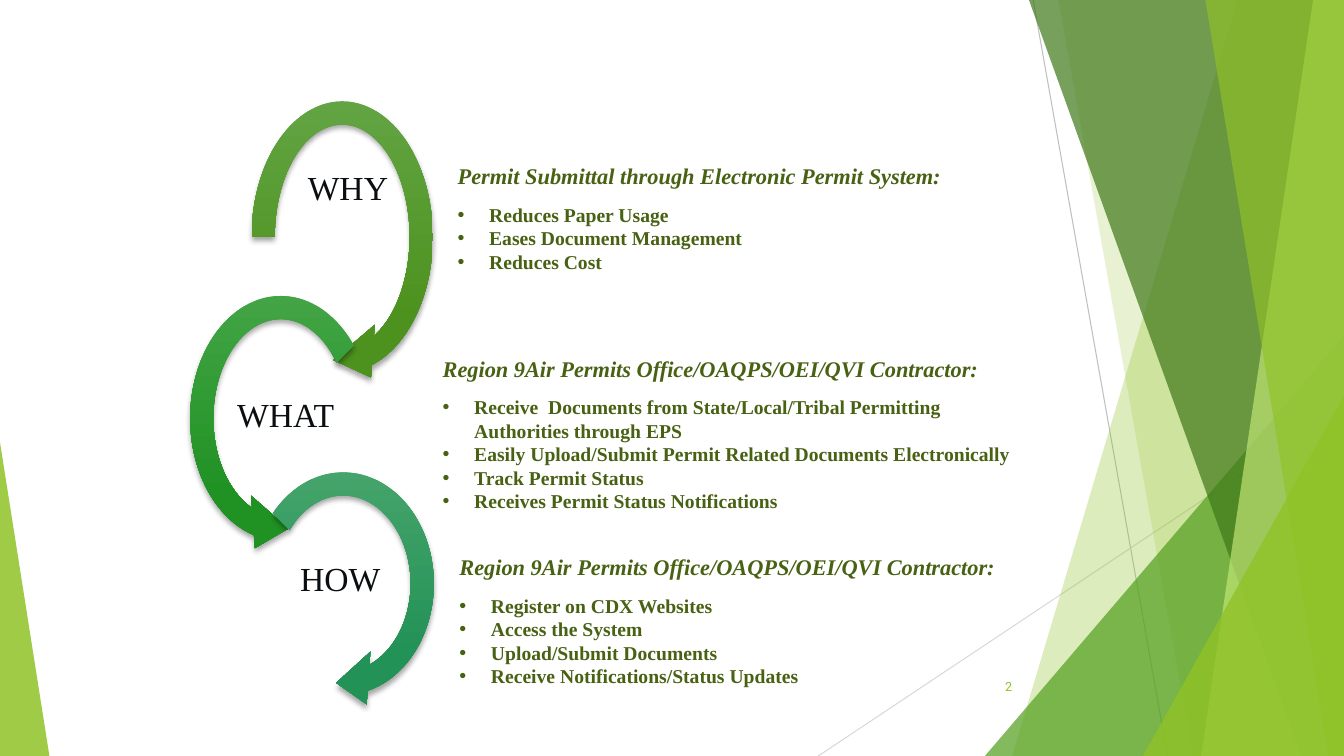
from lxml import etree
from pptx import Presentation
from pptx import util as u
from pptx.dml import color
from pptx.enum import shapes, text
from pptx.oxml import ns

COLORS = {
    "lime": "90C226", "green": "54A021", "forest": "3F7819", "pale": "C0E474",
    "gray": "BFBFBF", "light_gray": "D9D9D9", "olive": "486113", "ink": "0B0F11",
    "why_top": "63A545", "why_end": "4D921E", "what_top": "45A547",
    "what_end": "209224", "how_top": "47A56C", "how_end": "239257",
}
WIDTH, HEIGHT = 960, 540
SERIF = "Times New Roman"
PRESET = shapes.MSO_SHAPE
BULLET_INDENT = 22.5
OFFICE_HEADING = "Region 9Air Permits Office/OAQPS/OEI/QVI Contractor:"

RULES = [((738, 0), (834, HEIGHT), "gray"), ((WIDTH, 290), (584.5, HEIGHT), "light_gray")]
BANDS_BEHIND = [(884, 723, "lime", 30), (756, 852, "lime", 20)]
BANDS_FRONT = [(735, 929.5, "forest", 70), (938, 858, "pale", 70), (861, 949, "lime", 65)]

STEPS = [
    {"label": "WHY", "label_box": (206.5, 114.5, 84, 42), "arrow": PRESET.CIRCULAR_ARROW,
     "arrow_box": (169.2, 61.9, 150.5, 214.6), "angles": (45, 108), "key": "why",
     "list_box": (319.7, 112.3, 460, 104.4),
     "heading": "Permit Submittal through Electronic Permit System:",
     "items": ["Reduces Paper Usage", "Eases Document Management", "Reduces Cost"]},
    {"label": "WHAT", "label_box": (162, 276.5, 84, 42), "arrow": PRESET.LEFT_CIRCULAR_ARROW,
     "arrow_box": (125.3, 200.9, 150.5, 195.8), "angles": (63, 189), "key": "what",
     "list_box": (309, 250, 437.8, 140),
     "heading": OFFICE_HEADING,
     "items": ["Receive  Documents from State/Local/Tribal Permitting Authorities through EPS",
               "Easily Upload/Submit Permit Related Documents Electronically",
               "Track Permit Status", "Receives Permit Status Notifications"]},
    {"label": "HOW", "label_box": (198, 393.8, 90, 42), "arrow": PRESET.CIRCULAR_ARROW,
     "arrow_box": (169.9, 326.9, 150.5, 180), "angles": (45, 135), "key": "how",
     "list_box": (321, 391.7, 437.8, 104.4),
     "heading": OFFICE_HEADING,
     "items": ["Register on CDX Websites", "Access the System",
               "Upload/Submit Documents", "Receive Notifications/Status Updates"]},
]


def rgb(name):
    return color.RGBColor.from_string(COLORS[name])


def points(values):
    return [u.Pt(value) for value in values]


def add_xml(parent, tag, **attributes):
    child = etree.SubElement(parent, ns.qn(tag))
    for name, value in attributes.items():
        child.set(name, str(value))
    return child


def fill_translucent(shape, name, opacity):
    shape.shadow.inherit = False
    shape.line.fill.background()
    shape.fill.solid()
    shape.fill.fore_color.rgb = rgb(name)
    value = shape._element.spPr.find(".//" + ns.qn("a:srgbClr"))
    add_xml(value, "a:alpha", val=opacity * 1000)


def add_rule(slide, start, end, name):
    line = slide.shapes.add_connector(shapes.MSO_CONNECTOR.STRAIGHT, *points(start + end))
    line.line.color.rgb = rgb(name)
    line.line.width = u.Pt(0.75)
    add_xml(line._element.spPr, "a:effectLst")


def add_band(slide, top_x, bottom_x, name, opacity):
    builder = slide.shapes.build_freeform(u.Pt(top_x), 0)
    corners = [(WIDTH, 0), (WIDTH, HEIGHT), (bottom_x, HEIGHT)]
    builder.add_line_segments([points(corner) for corner in corners], close=True)
    fill_translucent(builder.convert_to_shape(), name, opacity)


def add_triangle(slide, box, apex, name, opacity):
    shape = slide.shapes.add_shape(PRESET.ISOSCELES_TRIANGLE, *points(box))
    shape.adjustments[0] = apex
    fill_translucent(shape, name, opacity)


def add_backdrop(slide):
    for rule in RULES:
        add_rule(slide, *rule)
    for band in BANDS_BEHIND:
        add_band(slide, *band)
    add_triangle(slide, (703.5, 240, 256.5, 300), 1, "green", 72)
    for band in BANDS_FRONT:
        add_band(slide, *band)
    add_triangle(slide, (816.5, 283, 143.5, 257), 1, "lime", 80)
    add_triangle(slide, (0, 316, 35.3, 224), 0, "lime", 85)


def add_arrow(slide, step):
    shape = slide.shapes.add_shape(step["arrow"], *points(step["arrow_box"]))
    for index, value in enumerate((0.11, 11.423, *step["angles"], 0.125)):
        shape.adjustments[index] = value
    shape.line.fill.background()
    shape.fill.gradient()
    shape.fill.gradient_angle = 270
    for stop, end, position in zip(shape.fill.gradient_stops, ("top", "end"), (0, 0.78)):
        stop.color.rgb = rgb(f"{step['key']}_{end}")
        stop.position = position
    shape.shadow.inherit = False
    effects = shape._element.spPr.find(ns.qn("a:effectLst"))
    shadow = add_xml(effects, "a:outerShdw", blurRad=u.Pt(4), dist=u.Pt(3),
                     dir=90 * 60000, rotWithShape=0)
    add_xml(add_xml(shadow, "a:srgbClr", val="000000"), "a:alpha", val=35000)


def write_text(paragraph, content, size, name, font=SERIF, bold=False, italic=False,
               align=text.PP_ALIGN.LEFT, spacing=1.0, after=0):
    run = paragraph.add_run()
    run.text = content
    run.font.size = u.Pt(size)
    run.font.name = font
    run.font.bold = bold
    run.font.italic = italic
    run.font.color.rgb = rgb(name)
    paragraph.alignment = align
    paragraph.line_spacing = spacing
    paragraph.space_before = u.Pt(0)
    paragraph.space_after = u.Pt(after)


def add_label(slide, box, content, size, name, margin=None, **style):
    frame = slide.shapes.add_textbox(*points(box)).text_frame
    frame.word_wrap = True
    frame.vertical_anchor = text.MSO_ANCHOR.MIDDLE
    if margin is not None:
        frame.margin_left = frame.margin_right = u.Pt(margin)
        frame.margin_top = frame.margin_bottom = u.Pt(margin)
    write_text(frame.paragraphs[0], content, size, name, **style)


def set_bullet(paragraph, bullet):
    indent = u.Pt(BULLET_INDENT) if bullet else 0
    properties = paragraph._p.get_or_add_pPr()
    properties.set("marL", str(indent))
    properties.set("indent", str(-indent))
    if bullet:
        add_xml(properties, "a:buFont", typeface="Arial")
        add_xml(properties, "a:buChar", char=bullet)
    else:
        add_xml(properties, "a:buNone")


def fill_list(slide, shape, step):
    slide.shapes._spTree.append(shape._element)
    shape.left, shape.top, shape.width, shape.height = points(step["list_box"])
    frame = shape.text_frame
    frame.word_wrap = True
    frame.auto_size = text.MSO_AUTO_SIZE.NONE
    frame.vertical_anchor = text.MSO_ANCHOR.TOP
    heading = frame.paragraphs[0]
    write_text(heading, step["heading"], 16, "olive", bold=True, italic=True, after=9.5)
    set_bullet(heading, None)
    for item in step["items"]:
        paragraph = frame.add_paragraph()
        write_text(paragraph, item, 14, "olive", bold=True)
        set_bullet(paragraph, "•")


def main():
    presentation = Presentation()
    presentation.slide_width, presentation.slide_height = points((WIDTH, HEIGHT))
    slide = presentation.slides.add_slide(presentation.slide_layouts.get_by_name("Comparison"))
    title, *bodies = slide.placeholders
    for unused in (title, *bodies[len(STEPS):]):
        slide.shapes._spTree.remove(unused._element)
    add_backdrop(slide)
    for step in STEPS:
        add_arrow(slide, step)
        add_label(slide, step["label_box"], step["label"], 24, "ink", margin=1.5,
                  align=text.PP_ALIGN.CENTER, spacing=0.9)
    for body, step in zip(bodies, STEPS):
        fill_list(slide, body, step)
    add_label(slide, (676, 476, 54, 28.8), "2", 9, "lime", font="Roboto",
              align=text.PP_ALIGN.RIGHT)
    presentation.save("out.pptx")


if __name__ == "__main__":
    main()
